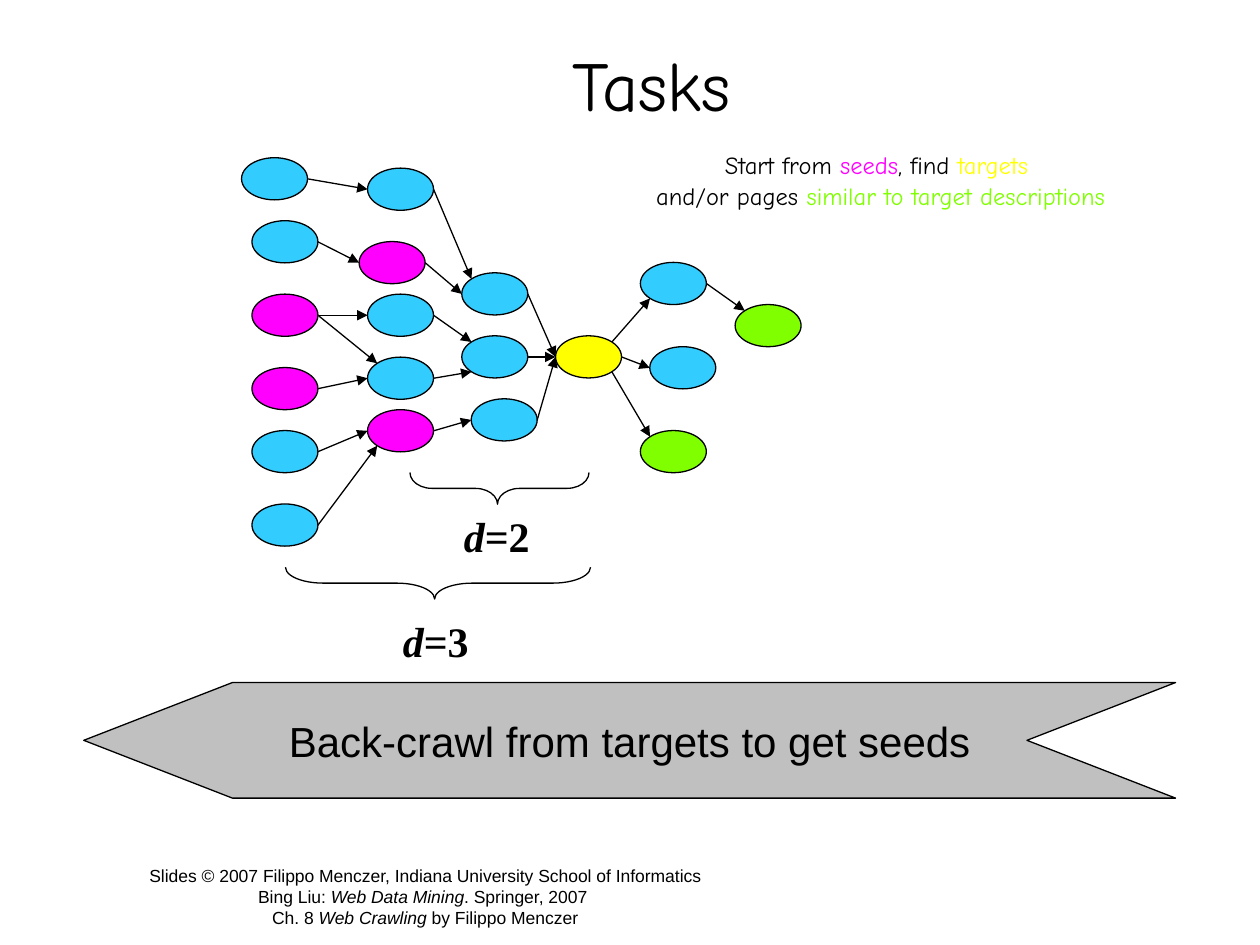
from math import sqrt

from lxml import etree
from pptx import Presentation
from pptx.dml.color import RGBColor
from pptx.enum.shapes import MSO_CONNECTOR, MSO_SHAPE
from pptx.enum.text import MSO_ANCHOR, PP_ALIGN
from pptx.oxml.ns import qn
from pptx.util import Cm, Pt

OVAL = MSO_SHAPE.OVAL
BRACE = MSO_SHAPE.LEFT_BRACE
CHEVRON = MSO_SHAPE.CHEVRON
STRAIGHT = MSO_CONNECTOR.STRAIGHT
CENTER = PP_ALIGN.CENTER
TOP, MIDDLE = MSO_ANCHOR.TOP, MSO_ANCHOR.MIDDLE

BLACK, GREY = "000000", "C0C0C0"
PAGE, SEED, TARGET, SIMILAR = "33CCFF", "FF00FF", "FFFF00", "80FF00"
NODE_WIDTH, NODE_HEIGHT = 1.33, 0.85
DIAGONAL = sqrt(0.5)
SITES = {
    "left": (-1, 0),
    "right": (1, 0),
    "upper left": (-DIAGONAL, -DIAGONAL),
    "lower left": (-DIAGONAL, DIAGONAL),
    "upper right": (DIAGONAL, -DIAGONAL),
    "lower right": (DIAGONAL, DIAGONAL),
}

NODES = {
    "far 1": (4.87, 3.18, PAGE),
    "far 2": (5.08, 4.45, PAGE),
    "far 3": (5.08, 5.93, SEED),
    "far 4": (5.08, 7.41, SEED),
    "far 5": (5.08, 8.68, PAGE),
    "far 6": (5.08, 10.16, PAGE),
    "middle 1": (7.41, 3.39, PAGE),
    "middle 2": (7.24, 4.87, SEED),
    "middle 3": (7.41, 5.93, PAGE),
    "middle 4": (7.41, 7.2, PAGE),
    "middle 5": (7.41, 8.26, SEED),
    "near 1": (9.31, 5.5, PAGE),
    "near 2": (9.31, 6.77, PAGE),
    "near 3": (9.5, 8.04, PAGE),
    "target": (11.2, 6.77, TARGET),
    "next 1": (12.91, 5.29, PAGE),
    "next 2": (13.1, 6.99, PAGE),
    "next 3": (12.91, 8.68, SIMILAR),
    "last": (14.82, 6.14, SIMILAR),
}

LINKS = [
    ("far 1", "right", "middle 1", "left"),
    ("far 2", "right", "middle 2", "left"),
    ("far 3", "right", "middle 3", "left"),
    ("far 3", "right", "middle 4", "upper left"),
    ("far 4", "right", "middle 4", "left"),
    ("far 5", "right", "middle 5", "left"),
    ("far 6", "right", "middle 5", "lower left"),
    ("middle 1", "right", "near 1", "upper left"),
    ("middle 2", "right", "near 1", "left"),
    ("middle 3", "right", "near 2", "upper left"),
    ("middle 4", "right", "near 2", "lower left"),
    ("middle 5", "right", "near 3", "left"),
    ("near 1", "right", "target", "left"),
    ("near 2", "right", "target", "left"),
    ("near 3", "right", "target", "left"),
    ("target", "upper right", "next 1", "lower left"),
    ("target", "right", "next 2", "left"),
    ("target", "lower right", "next 3", "upper left"),
    ("next 1", "right", "last", "upper left"),
]


def color(code):
    return RGBColor.from_string(code)


def site_point(node, site):
    left, top, _ = NODES[node]
    across, down = SITES[site]
    return (Cm(left + NODE_WIDTH * (1 + across) / 2),
            Cm(top + NODE_HEIGHT * (1 + down) / 2))


def span(text, code=BLACK, bold=False, italic=False):
    return text, code, bold, italic


class Sketch:
    """Draws styled elements on the current slide."""

    line_width = Pt(0.75)

    def __init__(self, page):
        self.page = page

    def outline(self, line):
        line.color.rgb = color(BLACK)
        line.width = self.line_width

    def shape(self, kind, left, top, width, height, fill=None):
        shape = self.page.shapes.add_shape(
            kind, Cm(left), Cm(top), Cm(width), Cm(height))
        shape.shadow.inherit = False
        if fill:
            shape.fill.solid()
            shape.fill.fore_color.rgb = color(fill)
        else:
            shape.fill.background()
        self.outline(shape.line)
        return shape

    def arrow(self, start, end):
        arrow = self.page.shapes.add_connector(STRAIGHT, *start, *end)
        self.outline(arrow.line)
        properties = arrow.element.spPr
        etree.SubElement(properties.find(qn("a:ln")), qn("a:tailEnd"), type="triangle")
        etree.SubElement(properties, qn("a:effectLst"))

    def brace(self, left, top, width, height, curve):
        brace = self.shape(BRACE, left, top, width, height)
        brace.rotation = 270
        brace.adjustments[0] = curve
        brace.adjustments[1] = 0.489

    def set_lines(self, frame, lines, font, size, anchor=TOP, wrap=True, spacing=None, gap=0):
        frame.word_wrap = wrap
        frame.vertical_anchor = anchor
        for index, line in enumerate(lines):
            para = frame.paragraphs[0] if index == 0 else frame.add_paragraph()
            para.alignment = CENTER
            if spacing:
                para.line_spacing = spacing
            if index and gap:
                para.space_before = Pt(gap)
            for text, code, bold, italic in line:
                run = para.add_run()
                run.text = text
                run.font.name = font
                run.font.size = Pt(size)
                run.font.bold = bold
                run.font.italic = italic
                run.font.color.rgb = color(code)

    def text(self, left, top, width, height, lines, font, size, **layout):
        box = self.page.shapes.add_textbox(Cm(left), Cm(top), Cm(width), Cm(height))
        self.set_lines(box.text_frame, lines, font, size, **layout)

    def banner(self, left, top, width, height, text):
        banner = self.shape(CHEVRON, left, top, width, height, GREY)
        banner.adjustments[0] = 1.286
        banner.element.spPr.find(qn("a:xfrm")).set("flipH", "1")
        self.set_lines(banner.text_frame, [[span(text)]], "Arial", 24,
                       anchor=MIDDLE, wrap=False)


def main():
    deck = Presentation()
    deck.slide_width, deck.slide_height = Cm(25.4), Cm(19.05)
    sketch = Sketch(deck.slides.add_slide(deck.slide_layouts[6]))

    sketch.text(1.9, 17.32, 13.34, 1.52, [
        [span("Slides © 2007 Filippo Menczer, Indiana University School of Informatics")],
        [span("Bing Liu: "), span("Web Data Mining", italic=True), span(". Springer, 2007 ")],
        [span("Ch. 8 "), span("Web Crawling", italic=True), span(" by Filippo Menczer")],
    ], "Arial", 10)
    sketch.text(7.2, 0.42, 11.88, 2.54, [[span("Tasks")]], "Comic Neue", 40, anchor=MIDDLE)
    sketch.text(11.43, 2.96, 12.65, 1.6, [
        [span("Start from "), span("seeds", SEED), span(", find "), span("targets ", TARGET)],
        [span("and/or pages "), span("similar to target descriptions", SIMILAR)],
    ], "Comic Neue", 14, spacing=0.9, gap=2.8)

    for left, top, fill in NODES.values():
        sketch.shape(OVAL, left, top, NODE_WIDTH, NODE_HEIGHT, fill)
    for start, start_site, goal, goal_site in LINKS:
        sketch.arrow(site_point(start, start_site), site_point(goal, goal_site))

    sketch.brace(9.75, 8.04, 0.64, 3.61, 0.694)
    sketch.brace(8.51, 8.68, 0.64, 6.15, 1.185)
    for left, top, depth in ((9.1, 10.16, 2), (7.87, 12.28, 3)):
        sketch.text(left, top, 1.83, 1.27,
                    [[span("d", bold=True, italic=True), span(f"={depth}", bold=True)]],
                    "Times New Roman", 24, wrap=False)
    sketch.banner(1.69, 13.76, 22.01, 2.33, "Back-crawl from targets to get seeds")

    deck.save("out.pptx")


if __name__ == "__main__":
    main()
